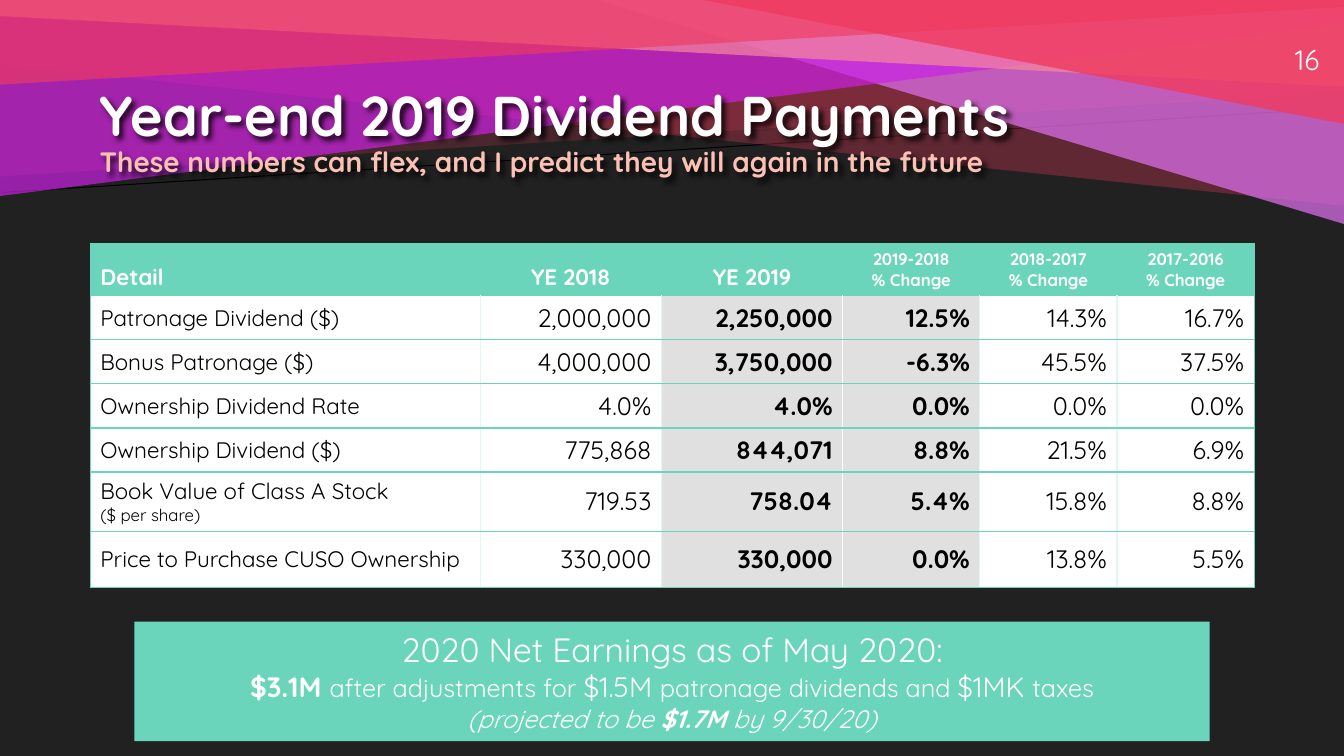
import dataclasses

import lxml.etree
import pptx
import pptx.dml.color
import pptx.enum.shapes
import pptx.enum.text
import pptx.oxml.ns
import pptx.util

Pt = pptx.util.Pt
qn = pptx.oxml.ns.qn
ALIGN = pptx.enum.text.PP_ALIGN
ANCHOR = pptx.enum.text.MSO_ANCHOR
SHAPE = pptx.enum.shapes.MSO_SHAPE
SLIDE_WIDTH, SLIDE_HEIGHT = 960, 540


@dataclasses.dataclass(frozen=True)
class Theme:
    font: str = "Quicksand"
    background: str = "212121"
    white: str = "FFFFFF"
    black: str = "000000"
    title: str = "FEFEFE"
    subtitle: str = "FBC1B5"
    teal: str = "6AD5BB"
    pale_teal: str = "E1F7F1"
    highlight: str = "E0E0E0"
    red: str = "F03B5E"
    pink: str = "F6899E"
    purple: str = "C922E2"
    lilac: str = "DC6FEC"
    title_size: int = 40
    lead_size: int = 24
    large_size: int = 20
    value_size: int = 18
    label_size: int = 16
    small_size: int = 12


THEME = Theme()

COLUMN_WIDTHS = [278.5, 129.5, 129.5, 98, 98, 98]
ROW_HEIGHTS = [37.2, 31.5, 31.5, 31.5, 31.5, 42.2, 40.3]
HEADINGS = ["Detail", "YE 2018", "YE 2019", "2019-2018\n% Change",
            "2018-2017\n% Change", "2017-2016\n% Change"]
DIVIDENDS = [
    ["Patronage Dividend ($)", "2,000,000", "2,250,000", "12.5%", "14.3%", "16.7%"],
    ["Bonus Patronage ($)", "4,000,000", "3,750,000", "-6.3%", "45.5%", "37.5%"],
    ["Ownership Dividend Rate", "4.0%", "4.0%", "0.0%", "0.0%", "0.0%"],
    ["Ownership Dividend ($)", "775,868", "844,071", "8.8%", "21.5%", "6.9%"],
    ["Book Value of Class A Stock\n($ per share)", "719.53", "758.04", "5.4%", "15.8%", "8.8%"],
    ["Price to Purchase CUSO Ownership", "330,000", "330,000", "0.0%", "13.8%", "5.5%"],
]
HIGHLIGHT_COLUMNS = (2, 3)


def rgb(color):
    return pptx.dml.color.RGBColor.from_string(color)


def write(paragraph, text, size=THEME.value_size, color=THEME.white, bold=False, italic=False):
    """Append text to a paragraph; a newline becomes a line break."""
    for index, line in enumerate(text.split("\n")):
        if index:
            paragraph.add_line_break()
            line_break = paragraph._p.findall(qn("a:br"))[-1]
            lxml.etree.SubElement(line_break, qn("a:rPr"), sz=str(size * 100))
        if line:
            run = paragraph.add_run()
            run.text = line
            run.font.name = THEME.font
            run.font.size = Pt(size)
            run.font.bold = bold
            run.font.italic = italic
            run.font.color.rgb = rgb(color)


def paint(shape, color, opacity=100):
    shape.shadow.inherit = False
    shape.fill.solid()
    shape.fill.fore_color.rgb = rgb(color)
    shape.line.fill.background()
    if opacity < 100:
        tint = shape._element.spPr.find(qn("a:solidFill"))[0]
        lxml.etree.SubElement(tint, qn("a:alpha"), val=str(opacity * 1000))


def add_band(slide, left_depth, right_depth, color, opacity):
    """A full-width band from the top edge with a slanted lower edge."""
    builder = slide.shapes.build_freeform(0, Pt(left_depth))
    builder.add_line_segments([(0, 0), (Pt(SLIDE_WIDTH), 0), (Pt(SLIDE_WIDTH), Pt(right_depth))])
    paint(builder.convert_to_shape(), color, opacity)


def add_corner(slide, left, depth, color, opacity):
    """A triangle that fills the top right corner."""
    length = SLIDE_WIDTH - left
    middle_x, middle_y = left + length / 2, depth / 2
    corner = slide.shapes.add_shape(
        SHAPE.ISOSCELES_TRIANGLE, Pt(middle_x - depth / 2), Pt(middle_y - length / 2),
        Pt(depth), Pt(length))
    corner.adjustments[0] = 1
    corner.rotation = 270
    paint(corner, color, opacity)


def add_hairline(slide, start_y, end_y):
    hairline = slide.shapes.add_connector(
        pptx.enum.shapes.MSO_CONNECTOR.STRAIGHT, Pt(1.5), Pt(start_y), Pt(SLIDE_WIDTH), Pt(end_y))
    hairline.line.color.rgb = rgb(THEME.black)
    hairline.line.width = Pt(0.75)
    lxml.etree.SubElement(hairline._element.spPr, qn("a:effectLst"))


def add_backdrop(slide):
    slide.background.fill.solid()
    slide.background.fill.fore_color.rgb = rgb(THEME.background)
    add_hairline(slide, 137.5, 77)
    add_band(slide, 46, 147, THEME.red, 30)
    add_band(slide, 126, 66, THEME.red, 20)
    add_corner(slide, 427, 160, THEME.lilac, 72)
    add_band(slide, 140, 17, THEME.purple, 70)
    add_band(slide, 11.5, 62, THEME.pink, 70)
    add_band(slide, 60.5, 5, THEME.red, 65)
    add_corner(slide, 503, 88.5, THEME.red, 80)


def set_borders(cell, **colors):
    properties = cell._tc.get_or_add_tcPr()
    for position, (side, color) in enumerate(colors.items()):
        border = lxml.etree.Element(qn("a:" + side), w=str(Pt(1)))
        fill = lxml.etree.SubElement(border, qn("a:solidFill"))
        lxml.etree.SubElement(fill, qn("a:srgbClr"), val=color)
        properties.insert(position, border)


def add_dividend_table(slide):
    table = slide.shapes.add_table(
        len(ROW_HEIGHTS), len(COLUMN_WIDTHS), Pt(64.5), Pt(174),
        Pt(sum(COLUMN_WIDTHS)), Pt(sum(ROW_HEIGHTS))).table
    table.horz_banding = False
    for column, width in zip(table.columns, COLUMN_WIDTHS):
        column.width = Pt(width)
    for row, height in zip(table.rows, ROW_HEIGHTS):
        row.height = Pt(height)

    # Colours of the vertical rules, from left to right
    pale = THEME.pale_teal
    body_rules = [THEME.teal, pale, pale, THEME.white, pale, pale, THEME.teal]
    header_rules = [THEME.teal] * len(body_rules)

    for r, texts in enumerate([HEADINGS] + DIVIDENDS):
        is_header = r == 0
        rules = header_rules if is_header else body_rules
        for c, text in enumerate(texts):
            cell = table.cell(r, c)
            highlighted = c in HIGHLIGHT_COLUMNS
            body_fill = THEME.highlight if highlighted else THEME.white
            cell.fill.solid()
            cell.fill.fore_color.rgb = rgb(THEME.teal if is_header else body_fill)
            cell.vertical_anchor = ANCHOR.BOTTOM if is_header else ANCHOR.MIDDLE
            set_borders(cell, lnL=rules[c], lnR=rules[c + 1], lnT=THEME.teal, lnB=THEME.teal)
            paragraph = cell.text_frame.paragraphs[0]
            if is_header:
                paragraph.alignment = ALIGN.CENTER if c else ALIGN.LEFT
                size = THEME.small_size if "\n" in text else THEME.label_size
                write(paragraph, text, size=size, bold=True)
            elif c:
                paragraph.alignment = ALIGN.RIGHT
                write(paragraph, text, color=THEME.black, bold=highlighted)
            else:
                label, newline, unit = text.partition("\n")
                write(paragraph, label + newline, size=THEME.label_size, color=THEME.black)
                write(paragraph, unit, size=THEME.small_size, color=THEME.black)


def add_title(slide):
    title = slide.shapes.title
    title.left, title.top, title.width, title.height = Pt(64), Pt(55.5), Pt(832), Pt(76)
    frame = title.text_frame
    frame.word_wrap = True
    frame.auto_size = pptx.enum.text.MSO_AUTO_SIZE.NONE
    frame.vertical_anchor = ANCHOR.BOTTOM
    heading = frame.paragraphs[0]
    heading.alignment = ALIGN.LEFT
    heading.line_spacing = 0.9
    write(heading, "Year-end 2019 Dividend Payments\n", size=THEME.title_size,
          color=THEME.title, bold=True)
    write(heading, "These numbers can flex, and I predict they will again in the future",
          size=THEME.large_size, color=THEME.subtitle, bold=True)
    # Soft shadow behind the heading
    effects = lxml.etree.SubElement(title._element.spPr, qn("a:effectLst"))
    shadow = lxml.etree.SubElement(effects, qn("a:outerShdw"), blurRad=str(Pt(4)),
                                   dist=str(Pt(3)), dir="2700000")
    shade = lxml.etree.SubElement(shadow, qn("a:srgbClr"), val=THEME.black)
    lxml.etree.SubElement(shade, qn("a:alpha"), val="80000")


def add_page_number(slide):
    frame = slide.shapes.add_textbox(Pt(866), Pt(16), Pt(83.5), Pt(39)).text_frame
    frame.word_wrap = True
    frame.vertical_anchor = ANCHOR.BOTTOM
    frame.margin_bottom = Pt(0.7)
    frame.paragraphs[0].alignment = ALIGN.RIGHT
    write(frame.paragraphs[0], "16", size=THEME.large_size)


def add_earnings_callout(slide):
    callout = slide.shapes.add_shape(SHAPE.RECTANGLE, Pt(96), Pt(444), Pt(768), Pt(85.5))
    paint(callout, THEME.teal)
    callout.text_frame.word_wrap = True
    callout.text_frame.vertical_anchor = ANCHOR.MIDDLE
    earnings = callout.text_frame.paragraphs[0]
    earnings.alignment = ALIGN.CENTER
    write(earnings, "2020 Net Earnings as of May 2020:\n", size=THEME.lead_size)
    write(earnings, "$3.1M ", size=THEME.large_size, bold=True)
    write(earnings, "after adjustments for ")
    write(earnings, "$1.5M ", size=THEME.large_size)
    write(earnings, "patronage dividends and ")
    write(earnings, "$1MK ", size=THEME.large_size)
    write(earnings, "taxes\n")
    write(earnings, "(projected to be ", italic=True)
    write(earnings, "$1.7M ", bold=True, italic=True)
    write(earnings, "by 9/30/20)", italic=True)


def main():
    deck = pptx.Presentation()
    deck.slide_width, deck.slide_height = Pt(SLIDE_WIDTH), Pt(SLIDE_HEIGHT)
    slide = deck.slides.add_slide(deck.slide_layouts.get_by_name("Title Only"))
    add_backdrop(slide)
    # Bring the title in front of the backdrop
    slide.shapes._spTree.append(slide.shapes.title._element)
    add_dividend_table(slide)
    add_page_number(slide)
    add_title(slide)
    add_earnings_callout(slide)
    deck.save("out.pptx")


if __name__ == "__main__":
    main()
